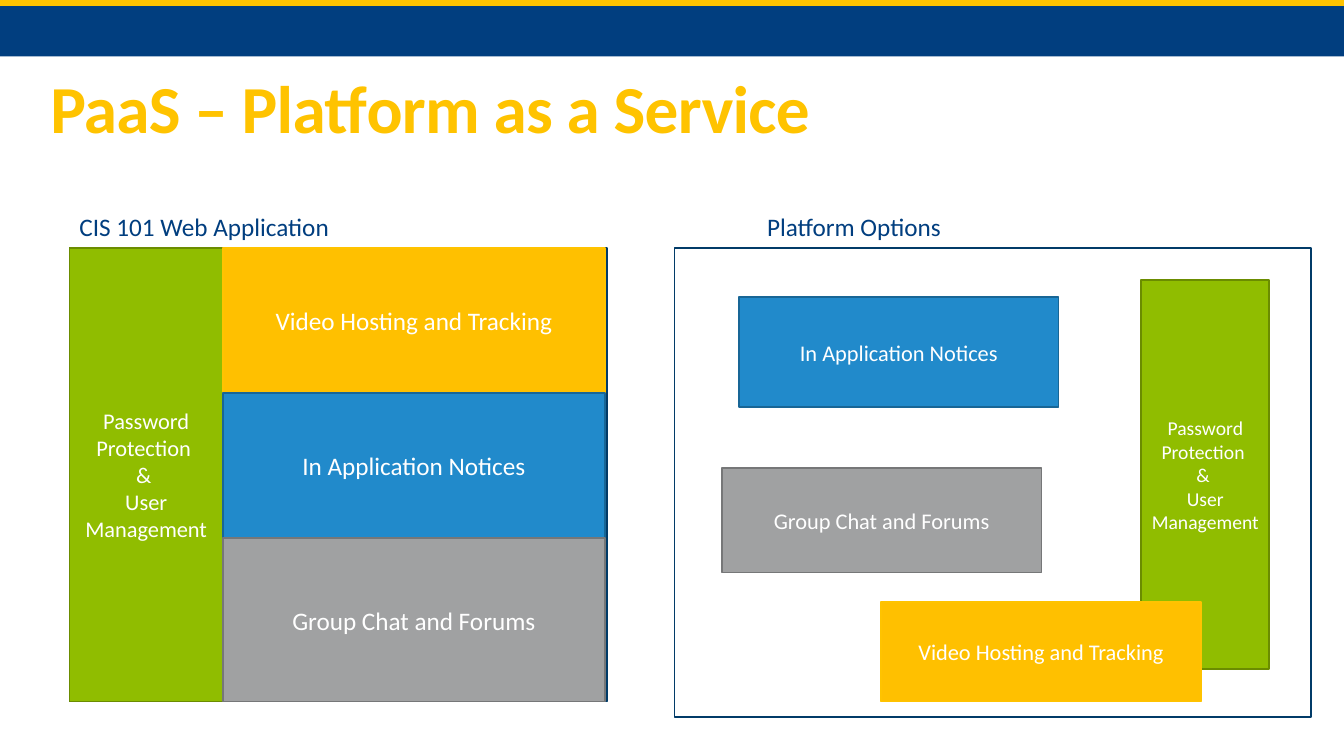
from dataclasses import dataclass

from pptx import Presentation
from pptx.dml.color import RGBColor
from pptx.enum.shapes import MSO_SHAPE
from pptx.enum.text import MSO_ANCHOR, PP_ALIGN
from pptx.util import Inches, Pt

RECT = MSO_SHAPE.RECTANGLE
MIDDLE = MSO_ANCHOR.MIDDLE
TOP = MSO_ANCHOR.TOP
CENTER = PP_ALIGN.CENTER
LEFT = PP_ALIGN.LEFT

FONT = "Calibri"
COLORS = {
    "navy": "013E7F",
    "frame": "013B68",
    "gold": "FFC300",
    "amber": "FFC000",
    "green": "90BD00",
    "dark_green": "6B8C00",
    "blue": "218ACB",
    "dark_blue": "186696",
    "gray": "A0A1A2",
    "dark_gray": "767778",
    "white": "FFFFFF",
}


@dataclass(frozen=True)
class Service:
    text: str
    fill: str
    line: str


@dataclass(frozen=True)
class Block:
    service: Service
    left: float
    top: float
    width: float
    height: float
    size: int


PASSWORD = Service("Password\nProtection \n& \nUser Management", "green", "dark_green")
VIDEO = Service("Video Hosting and Tracking", "amber", "gold")
NOTICES = Service("In Application Notices", "blue", "dark_blue")
CHAT = Service("Group Chat and Forums", "gray", "dark_gray")

APP_LEFT, PANEL_TOP, APP_WIDTH, APP_HEIGHT = 0.69, 2.46, 5.33, 4.5
SIDE_WIDTH = 1.52
STACK_LEFT, STACK_WIDTH = APP_LEFT + SIDE_WIDTH, 3.79
ROW_HEIGHT, LAST_HEIGHT = 1.44, 1.62
OPTION_WIDTH = 3.17
LABEL_TOP, LABEL_HEIGHT = 2.05, 0.4

APP_BLOCKS = [Block(PASSWORD, APP_LEFT, PANEL_TOP, SIDE_WIDTH, APP_HEIGHT, 16)] + [
    Block(service, STACK_LEFT, PANEL_TOP + i * ROW_HEIGHT, STACK_WIDTH, height, 18)
    for i, (service, height) in enumerate(
        [(VIDEO, ROW_HEIGHT), (NOTICES, ROW_HEIGHT), (CHAT, LAST_HEIGHT)]
    )
]
OPTION_BLOCKS = [
    Block(PASSWORD, 11.32, 2.78, 1.27, 3.86, 14),
    Block(VIDEO, 8.74, 5.97, OPTION_WIDTH, 0.99, 16),
    Block(NOTICES, 7.33, 2.95, OPTION_WIDTH, 1.09, 16),
    Block(CHAT, 7.16, 4.64, OPTION_WIDTH, 1.04, 16),
]


def rgb(name: str) -> RGBColor:
    return RGBColor.from_string(COLORS[name])


def set_text(sp, text: str, size: int, color: str, align=LEFT, anchor=TOP) -> None:
    tf = sp.text_frame
    tf.word_wrap = True
    tf.vertical_anchor = anchor
    tf.text = text
    for p in tf.paragraphs:
        p.alignment = align
        for r in p.runs:
            r.font.name = FONT
            r.font.size = Pt(size)
            r.font.color.rgb = rgb(color)


def add_rect(s, left: float, top: float, width: float, height: float,
             fill: str | None = None, line: str | None = None):
    sp = s.shapes.add_shape(RECT, Inches(left), Inches(top), Inches(width), Inches(height))
    sp.shadow.inherit = False
    if fill:
        sp.fill.solid()
        sp.fill.fore_color.rgb = rgb(fill)
    else:
        sp.fill.background()
    if line:
        sp.line.color.rgb = rgb(line)
        sp.line.width = Pt(1.25)
    else:
        sp.line.fill.background()
    return sp


def add_block(s, block: Block) -> None:
    service = block.service
    sp = add_rect(s, block.left, block.top, block.width, block.height,
                  service.fill, service.line)
    set_text(sp, service.text, block.size, "white", CENTER, MIDDLE)


def add_label(s, text: str, left: float) -> None:
    sp = s.shapes.add_textbox(Inches(left), Inches(LABEL_TOP),
                              Inches(APP_WIDTH), Inches(LABEL_HEIGHT))
    set_text(sp, text, 18, "navy")


def add_title(s, text: str) -> None:
    sp = s.shapes.add_textbox(Inches(0.4), Inches(0.56), Inches(12.45), Inches(1.13))
    set_text(sp, text, 48, "gold", anchor=MIDDLE)
    p = sp.text_frame.paragraphs[0]
    p.line_spacing = 0.85
    r = p.runs[0]
    r.font.bold = True
    r._r.get_or_add_rPr().set("spc", "-50")


def main() -> None:
    prs = Presentation()
    prs.slide_width = Inches(13.33)
    prs.slide_height = Inches(7.5)
    s = prs.slides.add_slide(prs.slide_layouts[6])

    add_rect(s, 0, 0.06, 13.33, 0.5, "navy")
    add_rect(s, 0, -0.01, 13.33, 0.07, "gold")
    add_title(s, "PaaS – Platform as a Service")

    add_rect(s, APP_LEFT, PANEL_TOP, APP_WIDTH, APP_HEIGHT, line="frame")
    add_label(s, "CIS 101 Web Application", APP_LEFT)
    add_label(s, "Platform Options", 7.51)
    for block in APP_BLOCKS:
        add_block(s, block)

    add_rect(s, 6.69, PANEL_TOP, 6.31, 4.65, line="frame")
    for block in OPTION_BLOCKS:
        add_block(s, block)

    prs.save("out.pptx")


if __name__ == "__main__":
    main()
